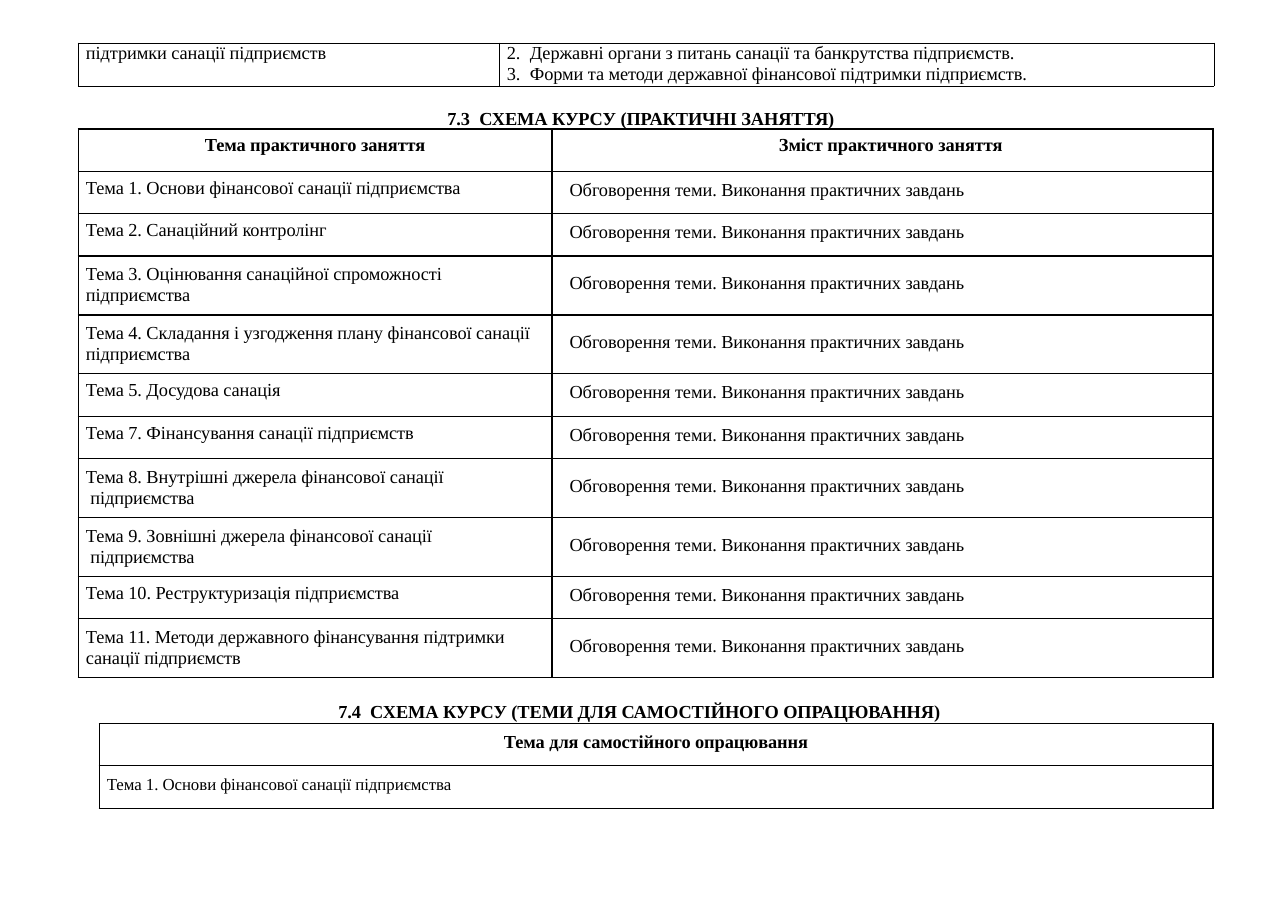
from dataclasses import dataclass

from lxml.etree import SubElement as Child
from pptx import Presentation
from pptx.dml.color import RGBColor as Color
from pptx.enum.text import MSO_ANCHOR as Anchor, PP_ALIGN as Align
from pptx.oxml.ns import qn
from pptx.util import Inches, Pt


@dataclass
class Theme:
    font: str = "Times New Roman"
    ink: str = "000000"
    body: float = 12
    small: float = 11
    tracking: int = -5
    number_gap: int = 300
    thin: float = 0.5
    rule: float = 1


theme = Theme()
GRID = Inches(0.01)

deck = Presentation()
deck.slide_width, deck.slide_height = 1169 * GRID, 827 * GRID
page = deck.slides.add_slide(deck.slide_layouts[6])


def write(target, text, size=theme.body, bold=False, align=Align.LEFT, top=0,
          indent=0, hang=0, leading=None, start=None, gap=None, wrap=True):
    frame = target.text_frame
    holder = target if hasattr(target, "margin_top") else frame
    holder.margin_left = holder.margin_right = holder.margin_bottom = 0
    holder.margin_top = top * GRID
    holder.vertical_anchor = Anchor.TOP
    frame.word_wrap = wrap
    for index, line in enumerate(text.split("\n")):
        para = frame.add_paragraph() if index else frame.paragraphs[0]
        if gap:
            for piece in line.partition(" "):
                para.add_run().text = piece
        else:
            para.text = line
        para.alignment = align
        para.line_spacing = Pt(leading) if leading else None
        props = para._p.get_or_add_pPr()
        props.set("marL", str((indent + hang) * GRID))
        props.set("indent", str(-hang * GRID))
        if start:
            Child(props, qn("a:buAutoNum"), type="arabicPeriod", startAt=str(start))
        for span in para.runs:
            span.font.name, span.font.size, span.font.bold = theme.font, Pt(size), bold
            span.font.color.rgb = Color.from_string(theme.ink)
            spacing = gap if gap and span.text == " " else theme.tracking
            span._r.get_or_add_rPr().set("spc", str(spacing))


def add_grid(left, top, widths, heights, weight):
    table = page.shapes.add_table(len(heights), len(widths), left * GRID, top * GRID,
                                  sum(widths) * GRID, int(sum(heights) * GRID)).table
    table.first_row = table.horz_banding = False
    for column, width in zip(table.columns, widths):
        column.width = width * GRID
    for row, height in zip(table.rows, heights):
        row.height = int(height * GRID)
    for cell in table.iter_cells():
        props = cell._tc.get_or_add_tcPr()
        for side in ("lnL", "lnR", "lnT", "lnB"):
            edge = Child(props, qn(f"a:{side}"), w=str(Pt(weight)))
            Child(Child(edge, qn("a:solidFill")), qn("a:srgbClr"), val=theme.ink)
        cell.fill.background()
    return table


support = add_grid(71, 39, [382, 649], [39], theme.thin)
write(support.cell(0, 0), "підтримки санації підприємств", indent=7, leading=13.4)
write(support.cell(0, 1),
      "Державні органи з питань санації та банкрутства підприємств.\n"
      "Форми та методи державної фінансової підтримки підприємств.",
      indent=7, hang=21, leading=13.6, start=2)

headings = [
    (406, 96, 361, "7.3 СХЕМА КУРСУ (ПРАКТИЧНІ ЗАНЯТТЯ)"),
    (307, 635, 559, "7.4 СХЕМА КУРСУ (ТЕМИ ДЛЯ САМОСТІЙНОГО ОПРАЦЮВАННЯ)"),
]
for left, top, width, title in headings:
    box = page.shapes.add_textbox(left * GRID, top * GRID, width * GRID, 23 * GRID)
    write(box, title, bold=True, top=1, gap=theme.number_gap, wrap=False)

topics = [
    ("Тема 1. Основи фінансової санації підприємства", 0),
    ("Тема 2. Санаційний контролінг", 0),
    ("Тема 3. Оцінювання санаційної спроможності\vпідприємства", 0),
    ("Тема 4. Складання і узгодження плану фінансової санації\vпідприємства", 0),
    ("Тема 5. Досудова санація", 0),
    ("Тема 7. Фінансування санації підприємств", 0),
    ("Тема 8. Внутрішні джерела фінансової санації\vпідприємства", 4),
    ("Тема 9. Зовнішні джерела фінансової санації\vпідприємства", 4),
    ("Тема 10. Реструктуризація підприємства", 0),
    ("Тема 11. Методи державного фінансування підтримки\vсанації підприємств", 0),
]
heights = [38.5] + [53.5 if "\v" in topic else 38.5 for topic, hang in topics]
practice = add_grid(71, 117, [430, 600], heights, theme.rule)
write(practice.cell(0, 0), "Тема практичного заняття", bold=True, align=Align.CENTER, top=6)
write(practice.cell(0, 1), "Зміст практичного заняття", bold=True, align=Align.CENTER,
      top=6, indent=15)
for row, (topic, hang) in enumerate(topics, 1):
    tall = "\v" in topic
    write(practice.cell(row, 0), topic, top=7 if tall else 6, indent=7, hang=hang,
          leading=13.8 if tall else None)
    write(practice.cell(row, 1), "Обговорення теми. Виконання практичних завдань",
          top=16 if tall else 8, indent=16)

self_study = add_grid(90, 657, [1011], [38, 39], theme.rule)
write(self_study.cell(0, 0), "Тема для самостійного опрацювання", bold=True,
      align=Align.CENTER, top=8)
write(self_study.cell(1, 0), topics[0][0], size=theme.small, top=9, indent=7)

deck.save("out.pptx")
